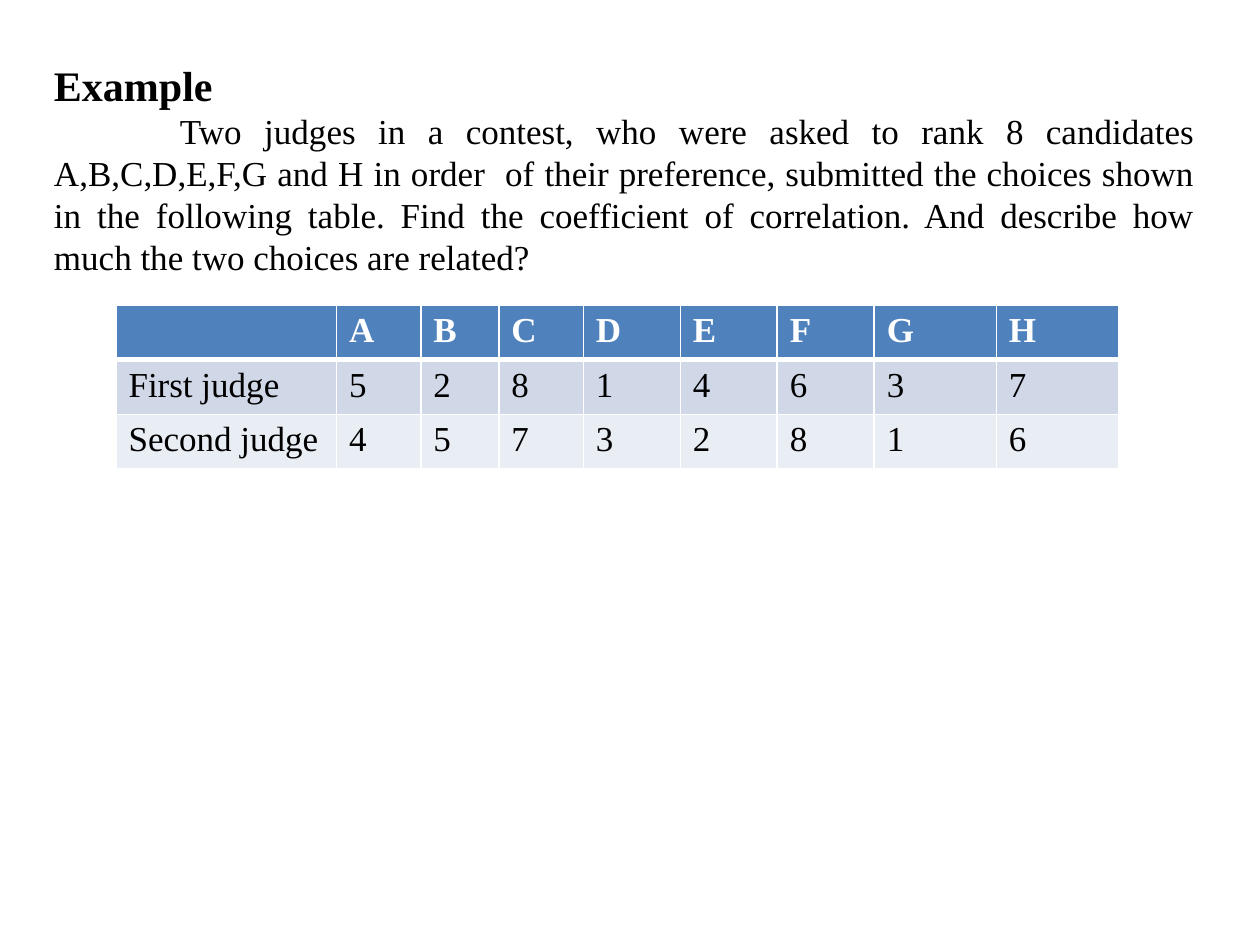
from dataclasses import dataclass

from lxml.etree import SubElement
from pptx import Presentation
from pptx.dml.color import RGBColor as RGB
from pptx.enum.text import PP_ALIGN as Align
from pptx.oxml.ns import qn
from pptx.util import Inches, Pt


@dataclass(frozen=True)
class Theme:
    font: str = "Times New Roman"
    heading_size: int = 24
    body_size: int = 20
    ink: str = "000000"
    paper: str = "FFFFFF"
    header_fill: str = "4F81BD"
    band_fills: tuple = ("D0D8E8", "E9EDF4")
    thin_rule: float = 1
    header_rule: float = 3


class SlideBuilder:
    def __init__(self, theme, slide):
        self.theme = theme
        self.slide = slide

    def style(self, paragraph, size, color, bold=False):
        font = paragraph.font
        font.name = self.theme.font
        font.size = Pt(size)
        font.bold = bold
        font.color.rgb = RGB.from_string(color)

    def problem(self, heading, question, left, top, width, height):
        """Bold heading above a justified question with an indented first line."""
        theme = self.theme
        box = self.slide.shapes.add_textbox(
            Inches(left), Inches(top), Inches(width), Inches(height))
        frame = box.text_frame
        frame.word_wrap = True
        title_line, body = frame.paragraphs[0], frame.add_paragraph()
        title_line.text, body.text = heading, question
        title_line.alignment = body.alignment = Align.JUSTIFY
        body._p.get_or_add_pPr().set("indent", str(Inches(1)))
        self.style(title_line, theme.heading_size, theme.ink, bold=True)
        self.style(body, theme.body_size, theme.ink)

    def borders(self, cell, top, bottom):
        """White rules; they must precede the fill in the cell properties."""
        thin = self.theme.thin_rule
        properties = cell._tc.get_or_add_tcPr()
        for side, points in zip("LRTB", (thin, thin, top, bottom)):
            line = SubElement(properties, qn(f"a:ln{side}"), w=str(Pt(points)))
            fill = SubElement(line, qn("a:solidFill"))
            SubElement(fill, qn("a:srgbClr"), val=self.theme.paper)

    def rank_table(self, rows, column_widths, left, top, row_height):
        theme = self.theme
        table = self.slide.shapes.add_table(
            len(rows), len(column_widths), Inches(left), Inches(top),
            Inches(sum(column_widths)), Inches(row_height * len(rows))).table
        for column, width in zip(table.columns, column_widths):
            column.width = Inches(width)
        fills = (theme.header_fill, *theme.band_fills)
        for r, (values, fill) in enumerate(zip(rows, fills)):
            is_header = r == 0
            top_rule = theme.header_rule if r == 1 else theme.thin_rule
            bottom_rule = theme.header_rule if is_header else theme.thin_rule
            color = theme.paper if is_header else theme.ink
            for c, value in enumerate(values):
                cell = table.cell(r, c)
                self.borders(cell, top_rule, bottom_rule)
                cell.fill.solid()
                cell.fill.fore_color.rgb = RGB.from_string(fill)
                cell.text = str(value)
                self.style(cell.text_frame.paragraphs[0],
                           theme.body_size, color, is_header)


def main():
    deck = Presentation()
    deck.slide_width, deck.slide_height = Inches(10), Inches(7.5)
    blank_layout = deck.slide_layouts[6]
    builder = SlideBuilder(Theme(), deck.slides.add_slide(blank_layout))

    # Problem statement
    builder.problem(
        "Example",
        "Two judges in a contest, who were asked to rank 8 candidates "
        "A,B,C,D,E,F,G and H in order  of their preference, submitted the "
        "choices shown in the following table. Find the coefficient of "
        "correlation. And describe how much the two choices are related?",
        left=0.33, top=0.42, width=9.25, height=2.19)

    # Ranks given by each judge
    builder.rank_table(
        [["", *"ABCDEFGH"],
         ["First judge", 5, 2, 8, 1, 4, 6, 3, 7],
         ["Second judge", 4, 5, 7, 3, 2, 8, 1, 6]],
        column_widths=[1.75, 0.67, 0.62, 0.67] + [0.77] * 3 + [0.97] * 2,
        left=0.92, top=2.42, row_height=0.43)

    deck.save("out.pptx")


if __name__ == "__main__":
    main()
